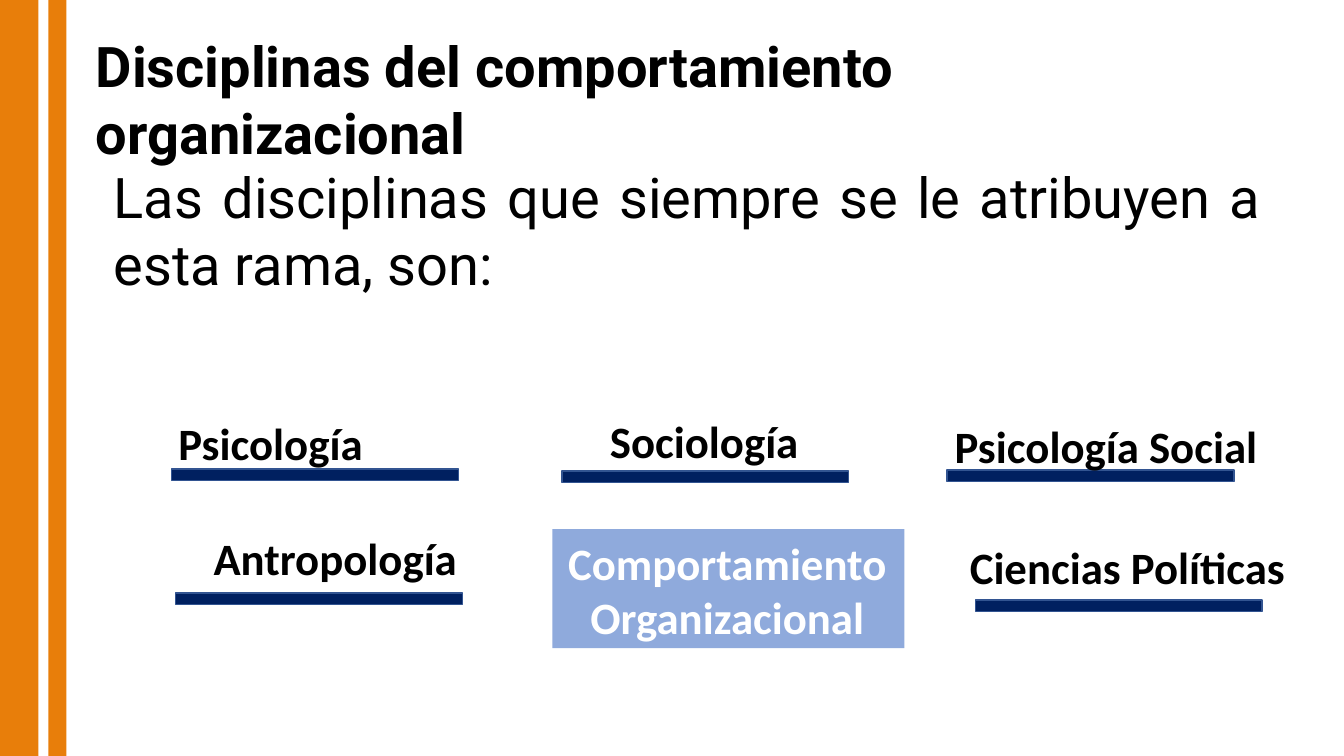
from pptx import Presentation, util as u
from pptx.dml.color import RGBColor
from pptx.enum import shapes, text

ORANGE = RGBColor(0xE8, 0x7E, 0x0A)
WHITE = RGBColor(0xFF, 0xFF, 0xFF)
BLACK = RGBColor(0, 0, 0)
NAVY = RGBColor(0x00, 0x20, 0x60)
NAVY_EDGE = RGBColor(0x32, 0x54, 0x91)
PALE_BLUE = RGBColor(0x8F, 0xAA, 0xDC)

deck = Presentation()
deck.slide_width, deck.slide_height = u.Inches(13.33), u.Inches(7.5)
slide = deck.slides.add_slide(deck.slide_layouts[6])
COL, ROW = deck.slide_width / 100, deck.slide_height / 100


def add_block(parent, kind, left, top, width, height, fill, edge=None):
    block = parent.shapes.add_shape(kind, int(left * COL), int(top * ROW),
                                    int(width * COL), int(height * ROW))
    block.shadow.inherit = False
    block.fill.solid()
    block.fill.fore_color.rgb = fill
    if edge is None:
        block.line.fill.background()
    else:
        block.line.color.rgb = edge
        block.line.width = u.Pt(1)


def add_words(words, left, top, width, height, size, face, color=BLACK,
              bold=True, align=text.PP_ALIGN.LEFT, wrap=True):
    box = slide.shapes.add_textbox(int(left * COL), int(top * ROW),
                                   int(width * COL), int(height * ROW))
    box.text_frame.word_wrap = wrap
    paragraph = box.text_frame.paragraphs[0]
    paragraph.text = words
    paragraph.alignment = align
    paragraph.font.size = u.Pt(size)
    paragraph.font.name = face
    paragraph.font.bold = bold
    paragraph.font.color.rgb = color


RECT = shapes.MSO_SHAPE.RECTANGLE
side_band = slide.shapes.add_group_shape()
add_block(side_band, RECT, 0, 0, 4.95, 100, ORANGE)
add_block(side_band, RECT, 2.85, 0, 0.75, 100, WHITE)

add_words("Disciplinas del comportamiento organizacional",
          6.38, 3.47, 75.92, 10.27, 40, "Roboto")
add_words("Las disciplinas que siempre se le atribuyen a esta rama, son:",
          7.73, 20.8, 86.8, 46.27, 40, "Roboto", bold=False,
          align=text.PP_ALIGN.JUSTIFY)

BAR_WIDTH, BAR_HEIGHT, LABEL_HEIGHT = 29.03, 6.4, 8.53
disciplines = [
    ("Psicología", 12.53, 54.27, 19.5, True, 8.93, 59.6),
    ("Sociología", 44.64, 54.13, 15.68, False, 37.96, 59.87),
    ("Psicología Social", 70.29, 54.67, 24.23, False, 66.62, 59.73),
    ("Antropología", 15.15, 69.6, 19.8, False, 9.23, 76),
    ("Ciencias Políticas", 71.42, 70.67, 25.21, False, 68.72, 76.93),
]
for discipline, left, top, width, wrap, bar_left, bar_top in disciplines:
    add_block(slide, shapes.MSO_SHAPE.MATH_MINUS, bar_left, bar_top,
              BAR_WIDTH, BAR_HEIGHT, NAVY, NAVY_EDGE)
    add_words(discipline, left, top, width, LABEL_HEIGHT, 32, "Calibri", wrap=wrap)

add_block(slide, RECT, 41.11, 70, 26.18, 15.73, PALE_BLUE)
add_words("Comportamiento Organizacional", 39.61, 70.27, BAR_WIDTH, 15.73,
          32, "Calibri", WHITE, align=text.PP_ALIGN.CENTER)

deck.save("out.pptx")
